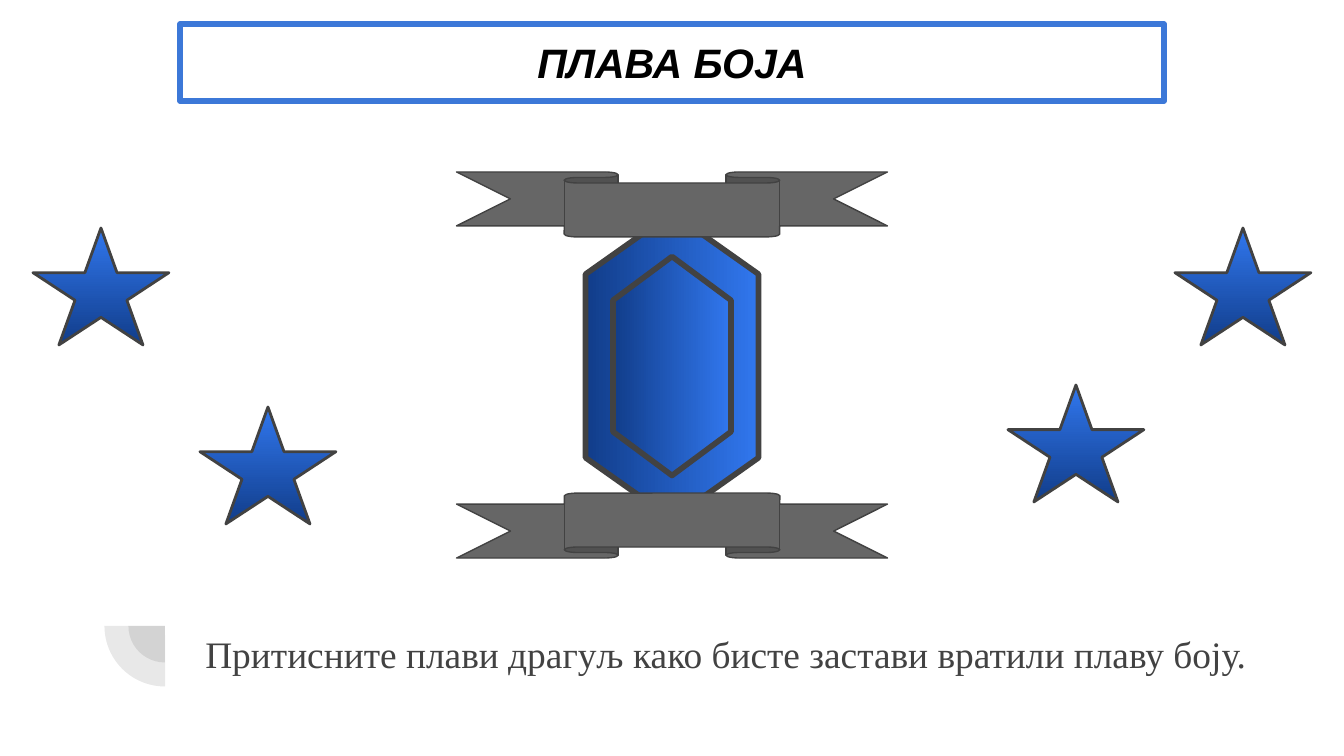
"""Build the slide about the colour blue, with a gem, ribbons and stars."""
from pptx import Presentation, util as u
from pptx.dml.color import RGBColor
from pptx.enum import shapes, text
from pptx.oxml.ns import qn
from lxml import etree

PX = 914400 / 134.4
SIZE = (1344, 756)
THEME = {
    "dark": "424242", "gray": "666666", "edge": "3C78D8", "black": "000000",
    "blue": ("3177EE", "113D8A"), "title": 22, "body": 20,
    "sans": "Arial", "serif": "Times New Roman",
}
KIND = shapes.MSO_SHAPE

TITLE = ("ПЛАВА БОЈА", (180, 24, 984, 77))
BODY = ("Притисните плави драгуљ како бисте застави вратили плаву боју.",
        (192, 614, 1103, 79))
PIES = [73, 121]
PIE_MID = (165, 626)
GEMS = [(306, 173), (219, 118)]
GEM_MID = (672, 366)
STARS = [(1008, 385), (33, 228), (200, 407), (1175, 228)]
STAR = (136, 117)
BANDS = [(172, 0), (493, 180)]
BAND = (431, 65)


def px(n):
    return u.Emu(round(n * PX))


def rgb(name):
    return RGBColor.from_string(THEME.get(name, name))


def mid(center, size):
    return (center[0] - size[0] / 2, center[1] - size[1] / 2, *size)


def draw(slide, kind, box, fill=None, line=None, width=1, turn=0, adj=(), alpha=None):
    shape = slide.shapes.add_shape(kind, *map(px, box))
    shape.shadow.inherit = False
    shape.rotation = turn
    for i, value in enumerate(adj):
        shape.adjustments[i] = value
    if fill is None:
        shape.fill.background()
    elif fill == "blue":
        shape.fill.gradient()
        shape.fill.gradient_angle = 270
        for stop, tone in zip(shape.fill.gradient_stops, THEME["blue"]):
            stop.color.rgb = rgb(tone)
    else:
        shape.fill.solid()
        shape.fill.fore_color.rgb = rgb(fill)
    if alpha:
        tone = shape.fill._xPr.find(".//" + qn("a:srgbClr"))
        etree.SubElement(tone, qn("a:alpha"), val=str(alpha * 1000))
    if line:
        shape.line.color.rgb = rgb(line)
        shape.line.width = u.Pt(width)
    else:
        shape.line.fill.background()
    return shape


def write(shape, words, size, font, color, align="LEFT", bold=False, italic=False):
    frame = shape.text_frame
    frame.word_wrap = True
    frame.vertical_anchor = text.MSO_ANCHOR.MIDDLE
    for side in ("left", "right", "top", "bottom"):
        setattr(frame, "margin_" + side, u.Inches(0.1))
    para = frame.paragraphs[0]
    para.alignment = getattr(text.PP_ALIGN, align)
    run = para.add_run()
    run.text = words
    run.font.size = u.Pt(THEME[size])
    run.font.name = THEME[font]
    run.font.color.rgb = rgb(color)
    run.font.bold, run.font.italic = bold, italic


def main():
    deck = Presentation()
    deck.slide_width, deck.slide_height = map(px, SIZE)
    slide = deck.slides.add_slide(deck.slide_layouts[6])

    for side in PIES:
        draw(slide, KIND.PIE, mid(PIE_MID, (side, side)), "dark",
             turn=270, adj=(107.93, 162), alpha=12)
    for size in GEMS:
        draw(slide, KIND.FLOWCHART_PREPARATION, mid(GEM_MID, size),
             "blue", "dark", 3, turn=90)

    words, box = BODY
    write(slide.shapes.add_textbox(*map(px, box)), words, "body", "serif", "dark")
    words, box = TITLE
    write(draw(slide, KIND.RECTANGLE, box, line="edge", width=3), words,
          "title", "sans", "black", align="CENTER", bold=True, italic=True)

    for spot in STARS:
        draw(slide, KIND.STAR_5_POINT, (*spot, *STAR), "blue", "dark", 1.5)
    for top, turn in BANDS:
        left = (SIZE[0] - BAND[0]) / 2
        draw(slide, KIND.DOWN_RIBBON, (left, top, *BAND), "gray", "dark", 0.75,
             turn=turn, adj=(0.17, 0.5))
    deck.save("out.pptx")


if __name__ == "__main__":
    main()
